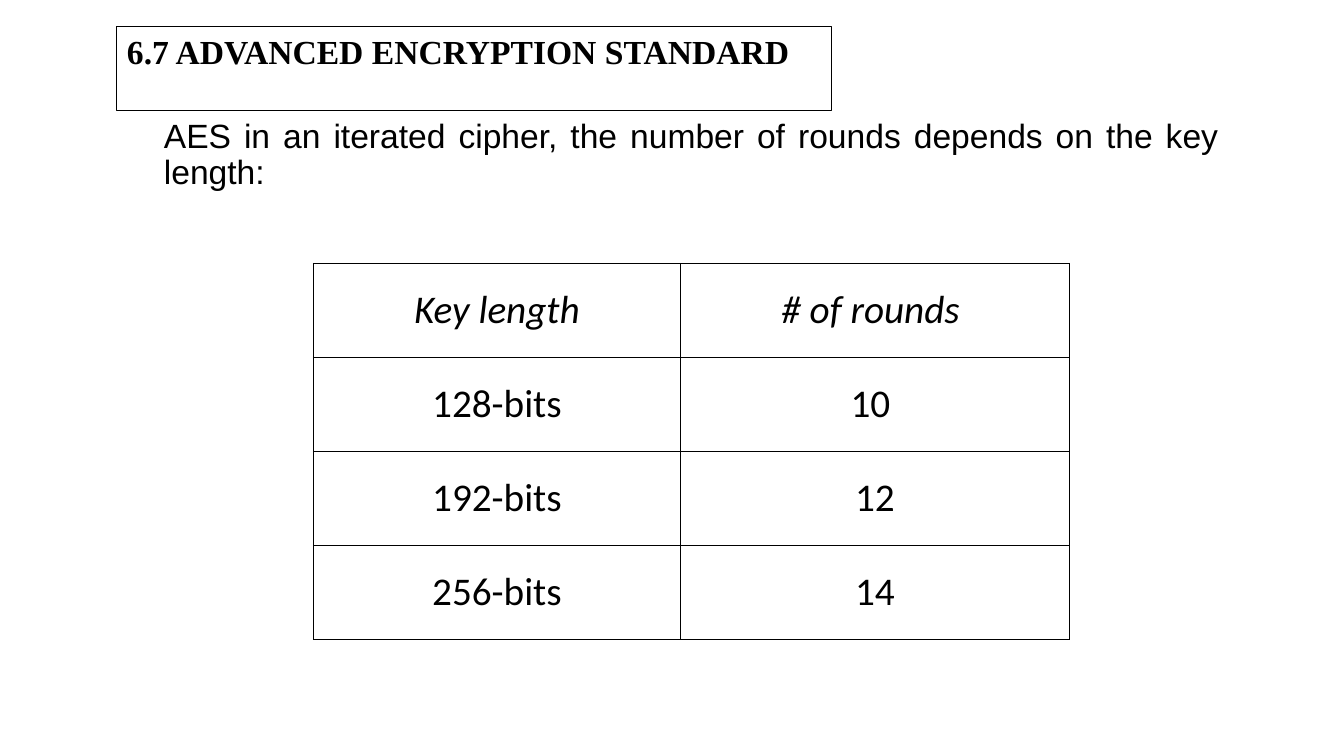
"""Build a slide on AES key lengths and round counts."""
from lxml import etree
from pptx import Presentation
from pptx.dml.color import RGBColor
from pptx.enum.text import MSO_ANCHOR, MSO_AUTO_SIZE, PP_ALIGN
from pptx.oxml.ns import qn
from pptx.util import Pt

LEFT, MID, FULL = PP_ALIGN.LEFT, PP_ALIGN.CENTER, PP_ALIGN.JUSTIFY
TOP, CENTER = MSO_ANCHOR.TOP, MSO_ANCHOR.MIDDLE
FIT, FIXED = MSO_AUTO_SIZE.SHAPE_TO_FIT_TEXT, MSO_AUTO_SIZE.NONE

TITLE = "6.7 ADVANCED ENCRYPTION STANDARD"
BODY = "AES in an iterated cipher, the number of rounds depends on the key length:"
ROWS = [
    ("Key length", "# of rounds "),
    ("128-bits", "10 "),
    ("192-bits", "12"),
    ("256-bits", "14"),
]
COLORS = {"ink": "000000"}
INK = RGBColor.from_string(COLORS["ink"])
WIDTHS = (262, 278)
HIGH = 67.1


def place(shape, left, top, width, height):
    shape.left, shape.top = Pt(left), Pt(top)
    shape.width, shape.height = Pt(width), Pt(height)


def write(frame, text, face, size, align, bold=False, italic=False):
    para = frame.paragraphs[0]
    para.alignment = align
    run = para.add_run()
    run.text = text
    font = run.font
    font.name, font.size = face, Pt(size)
    font.bold, font.italic = bold, italic
    font.color.rgb = INK
    return para


def border(cell):
    props = cell._tc.get_or_add_tcPr()
    for pos, side in enumerate(("lnL", "lnR", "lnT", "lnB")):
        line = etree.Element(qn("a:" + side), w=str(Pt(1)))
        fill = etree.SubElement(line, qn("a:solidFill"))
        etree.SubElement(fill, qn("a:srgbClr"), val=COLORS["ink"])
        props.insert(pos, line)


def add_title(slide):
    title = slide.shapes.title
    place(title, 83.5, 18.7, 510.5, 36.3)
    title.line.color.rgb = INK
    title.line.width = Pt(0.75)
    frame = title.text_frame
    frame.auto_size = FIT
    frame.vertical_anchor = TOP
    write(frame, TITLE, "Times New Roman", 24, LEFT, bold=True)


def add_body(slide):
    box = slide.shapes.add_textbox(Pt(110), Pt(81.5), Pt(767.5), Pt(81.5))
    frame = box.text_frame
    frame.word_wrap = True
    frame.auto_size = FIXED
    para = write(frame, BODY, "Arial", 24, FULL)
    para.line_spacing = 0.9
    para.space_before = Pt(10)


def add_grid(slide):
    count = len(ROWS)
    table = slide.shapes.add_table(
        count, len(WIDTHS), Pt(224), Pt(188.2), Pt(sum(WIDTHS)), Pt(HIGH * count)
    ).table
    table.horz_banding = False
    for col, width in zip(table.columns, WIDTHS):
        col.width = Pt(width)
    for r, texts in enumerate(ROWS):
        table.rows[r].height = Pt(HIGH)
        for c, text in enumerate(texts):
            cell = table.cell(r, c)
            cell.fill.background()
            cell.vertical_anchor = CENTER
            cell.margin_left = cell.margin_right = Pt(5)
            cell.margin_top = cell.margin_bottom = Pt(0)
            write(cell.text_frame, text, "Calibri", 28, MID, italic=r == 0)
            border(cell)


def main():
    deck = Presentation()
    deck.slide_width, deck.slide_height = Pt(960), Pt(540)
    slide = deck.slides.add_slide(deck.slide_layouts[5])
    add_body(slide)
    add_grid(slide)
    add_title(slide)
    deck.save("out.pptx")


if __name__ == "__main__":
    main()
